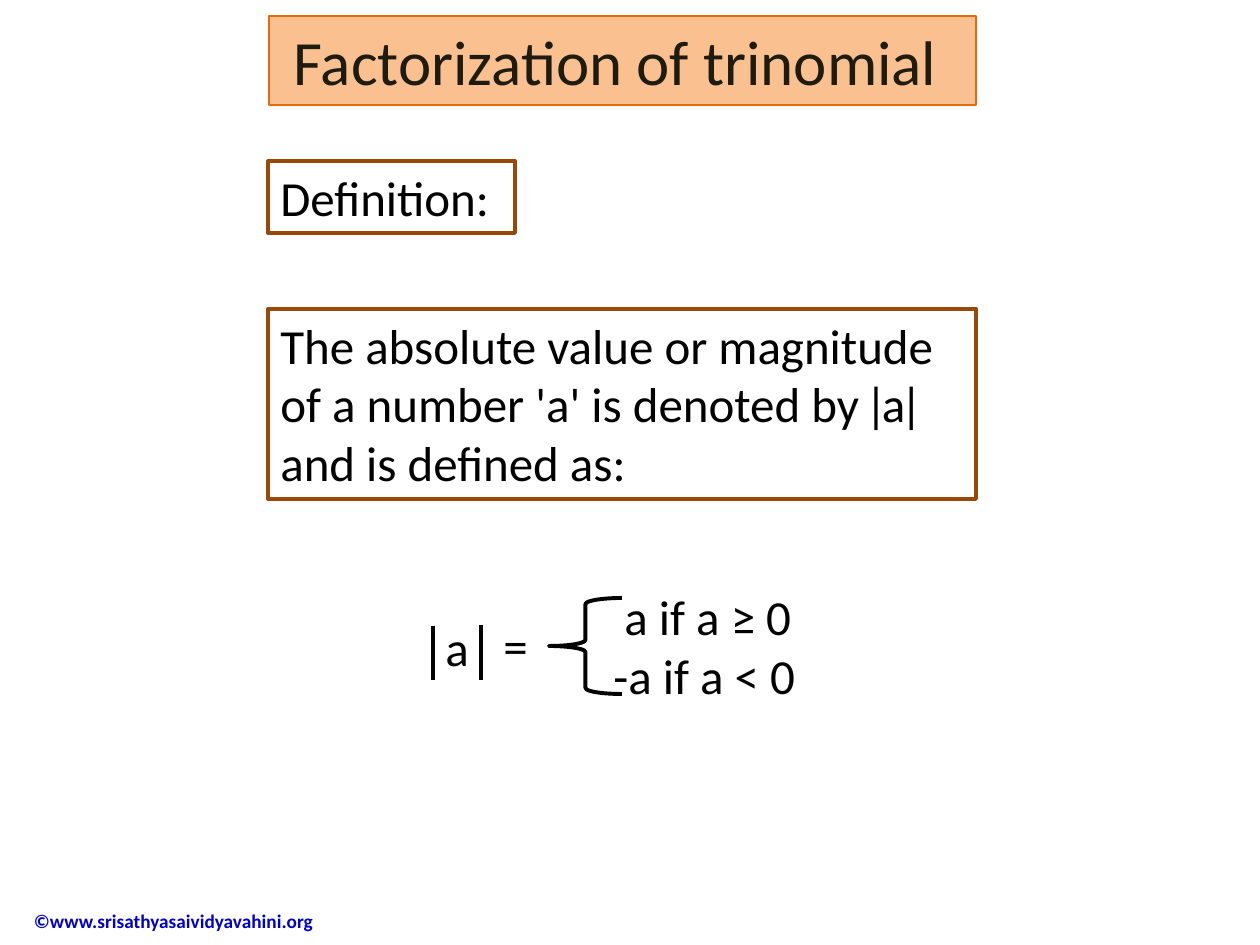
from lxml import etree
from pptx import Presentation
from pptx.dml.color import RGBColor
from pptx.enum.shapes import MSO_CONNECTOR, MSO_SHAPE
from pptx.enum.text import MSO_ANCHOR, MSO_AUTO_SIZE, PP_ALIGN
from pptx.oxml.ns import qn
from pptx.util import Pt

PX = 914400 // 126
LEFT, CENTER = PP_ALIGN.LEFT, PP_ALIGN.CENTER
TOP, MIDDLE = MSO_ANCHOR.TOP, MSO_ANCHOR.MIDDLE
GROW = MSO_AUTO_SIZE.SHAPE_TO_FIT_TEXT
RECT, BRACE = MSO_SHAPE.RECTANGLE, MSO_SHAPE.LEFT_BRACE
STRAIGHT = MSO_CONNECTOR.STRAIGHT

BLACK = RGBColor(0x00, 0x00, 0x00)
INK = RGBColor(0x1E, 0x1C, 0x11)
PEACH = RGBColor(0xFA, 0xC0, 0x90)
ORANGE = RGBColor(0xE4, 0x6C, 0x0A)
BROWN = RGBColor(0x98, 0x48, 0x07)
BLUE = RGBColor(0x00, 0x00, 0xCC)

FOOTER = ("©www.srisathyasaividyavahini.org", (-42, 895, 380, 52))
TITLE = ("Factorization of trinomial ", (269, 16, 707, 89))
BOXES = [
    ("The absolute value or magnitude of a number 'a' is denoted by ǀaǀ "
     "and is defined as:", (268, 309, 708, 190), 6),
    ("Definition:", (268, 161, 247, 72), 0),
]
BARS = [(433, 626, 680), (481, 625, 680)]
TERMS = [
    (["a"], (433, 611, 49, 72)),
    (["="], (491, 609, 50, 72)),
    ([" a if a ≥ 0", "-a if a < 0"], (601, 580, 209, 131)),
]
BRACE_AT = (549, 598, 73, 96)


def scale(*lengths):
    return [n * PX for n in lengths]


def write(shape, lines, size=28, color=BLACK, bold=False, align=LEFT,
          wrap=False, anchor=TOP):
    frame = shape.text_frame
    frame.word_wrap = wrap
    frame.auto_size = GROW
    frame.vertical_anchor = anchor
    for i, line in enumerate(lines):
        para = frame.add_paragraph() if i else frame.paragraphs[0]
        para.alignment = align
        run = para.add_run()
        run.text = line
        font = run.font
        font.name, font.size, font.bold = "Calibri", Pt(size), bold
        font.color.rgb = color
    return frame


def add_shape(parent, kind, at, line, width, fill=None):
    shape = parent.add_shape(kind, *scale(*at))
    shape.shadow.inherit = False
    if fill is None:
        shape.fill.background()
    else:
        shape.fill.solid()
        shape.fill.fore_color.rgb = fill
    shape.line.color.rgb = line
    shape.line.width = Pt(width)
    return shape


def add_bar(parent, x, top, end):
    bar = parent.add_connector(STRAIGHT, *scale(x, top, x, end))
    bar.line.color.rgb = BLACK
    bar.line.width = Pt(2.25)
    etree.SubElement(bar._element.spPr, qn("a:effectLst"))


def main():
    deck = Presentation()
    deck.slide_width, deck.slide_height = scale(1260, 945)
    shapes = deck.slides.add_slide(deck.slide_layouts[6]).shapes

    text, at = FOOTER
    frame = write(shapes.add_textbox(*scale(*at)), [text], 11, BLUE,
                  bold=True, wrap=True, anchor=MIDDLE)
    frame.auto_size = MSO_AUTO_SIZE.NONE
    frame.margin_left = 76 * PX

    text, at = TITLE
    write(add_shape(shapes, RECT, at, ORANGE, 0.75, PEACH), [text], 36, INK,
          align=CENTER)

    for text, at, gap in BOXES:
        box = add_shape(shapes, RECT, at, BROWN, 2.25)
        frame = write(box, [text], wrap=True)
        frame.paragraphs[0].space_after = Pt(gap)

    formula = shapes.add_group_shape().shapes
    for bar in BARS:
        add_bar(formula, *bar)
    add_shape(formula, BRACE, BRACE_AT, BLACK, 2.25)
    for lines, at in TERMS:
        write(formula.add_textbox(*scale(*at)), lines)

    deck.save("out.pptx")


if __name__ == "__main__":
    main()
